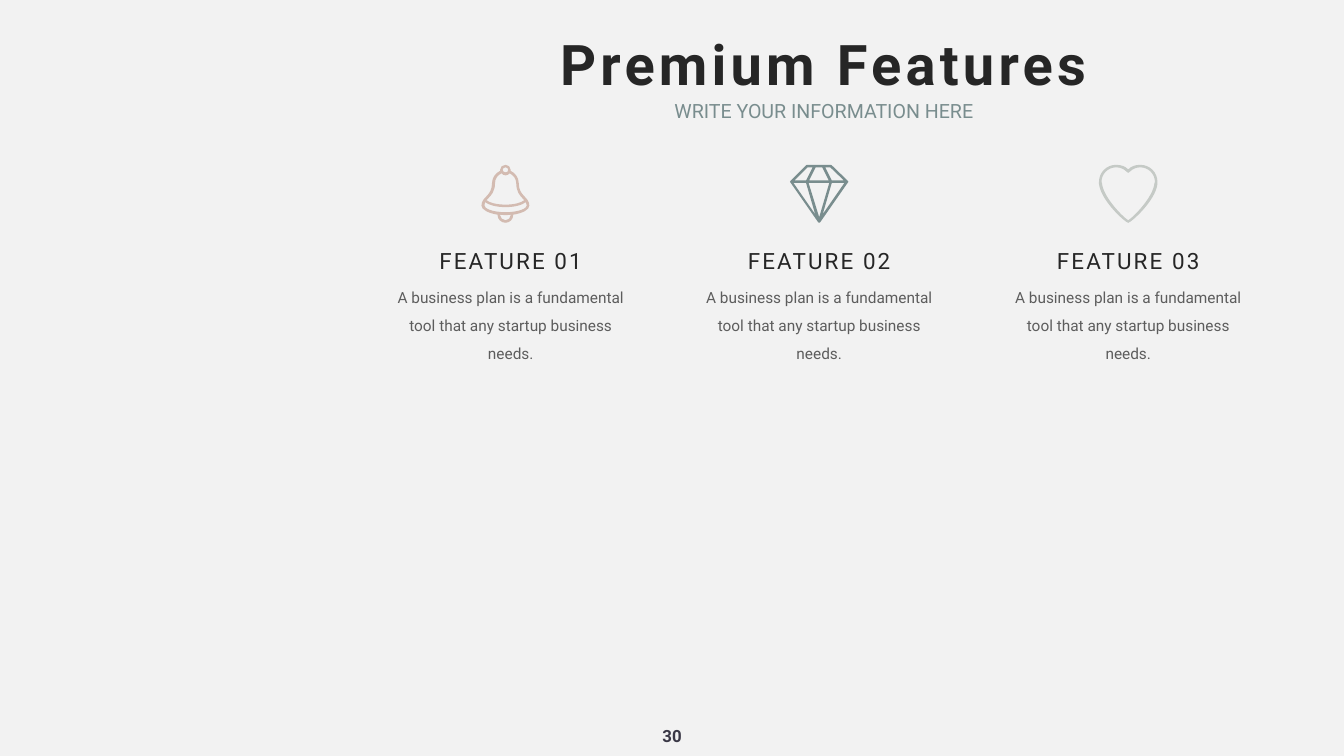
from lxml import etree
from pptx import Presentation
from pptx.dml.color import RGBColor
from pptx.enum.text import MSO_ANCHOR, MSO_AUTO_SIZE, PP_ALIGN
from pptx.oxml.ns import qn
from pptx.util import Pt

PX = 9144  # EMU per px, 100 px to the inch
CENTER = PP_ALIGN.CENTER
TOP, MIDDLE, BOTTOM = MSO_ANCHOR.TOP, MSO_ANCHOR.MIDDLE, MSO_ANCHOR.BOTTOM
GROW = MSO_AUTO_SIZE.SHAPE_TO_FIT_TEXT

THEME = {
    "font": "Roboto",
    "background": "F2F2F2",
    "title": {"size": 80, "color": "262626", "bold": True, "tracking": 6},
    "subtitle": {"size": 28, "color": "798D8E"},
    "heading": {"size": 32, "color": "262626", "tracking": 3},
    "body": {"size": 22, "color": "5D5D5D"},
    "page": {"size": 24, "color": "3A3846", "bold": True},
    "bell": "D3BBB1",
    "diamond": "798D8E",
    "heart": "C5CAC6",
}

# Each contour lists its start, then lines (x, y) and Bezier curves
# (control 1, control 2, end), in px from the icon's top left corner.
BELL = [
    [(48, 94), (20, 94, 6, 86, 6, 81), (6, 78, 6, 76, 7, 74), (15, 80, 30, 84, 48, 84),
     (65, 84, 81, 80, 88, 74), (89, 76, 90, 78, 90, 81), (90, 86, 75, 94, 48, 94)],
    [(48, 110), (42, 110, 37, 105, 37, 100), (37, 99), (41, 99, 44, 100, 48, 100),
     (51, 100, 55, 99, 58, 99), (58, 100), (58, 105, 53, 110, 48, 110)],
    [(13, 67), (19, 61, 27, 53, 27, 36), (27, 28, 32, 20, 40, 17), (42, 19, 44, 21, 48, 21),
     (51, 21, 54, 19, 56, 17), (63, 20, 69, 28, 69, 36), (69, 53, 76, 61, 82, 67),
     (85, 70), (80, 75, 65, 79, 48, 79), (30, 79, 15, 75, 10, 70)],
    [(48, 5), (51, 5, 53, 7, 53, 10), (53, 13, 51, 15, 48, 15),
     (45, 15, 42, 13, 42, 10), (42, 7, 45, 5, 48, 5)],
    [(95, 81), (95, 63, 74, 63, 74, 36), (74, 26, 67, 16, 58, 12), (58, 10),
     (58, 4, 53, 0, 48, 0), (42, 0, 37, 4, 37, 10), (37, 12), (28, 16, 21, 26, 21, 36),
     (21, 63, 0, 63, 0, 81), (0, 89, 14, 96, 32, 99), (32, 100),
     (32, 108, 39, 115, 48, 115), (56, 115, 63, 108, 63, 100), (63, 99),
     (82, 96, 95, 89, 95, 81)],
]
DIAMOND = [
    [(65, 98), (83, 36), (108, 36)],
    [(58, 104), (37, 36), (78, 36)],
    [(7, 36), (32, 36), (50, 98)],
    [(35, 5), (45, 5), (32, 31), (9, 31)],
    [(64, 5), (77, 31), (38, 31), (51, 5)],
    [(80, 5), (107, 31), (83, 31), (70, 5)],
    [(116, 34), (115, 32), (83, 1), (81, 0), (34, 0), (32, 1), (1, 32), (0, 34),
     (1, 35), (56, 114), (58, 115), (60, 114), (115, 35)],
]
HEART = [
    [(110, 37), (107, 65, 68, 104, 58, 110), (48, 104, 9, 65, 6, 37), (5, 34),
     (5, 18, 18, 5, 34, 5), (42, 5, 49, 8, 54, 13), (58, 16), (62, 13),
     (67, 8, 74, 5, 82, 5), (98, 5, 111, 18, 111, 34)],
    [(116, 34), (116, 15, 101, 0, 82, 0), (72, 0, 64, 3, 58, 9), (52, 3, 44, 0, 34, 0),
     (15, 0, 0, 15, 0, 34), (0, 38), (4, 72, 53, 115, 58, 115),
     (63, 115, 112, 72, 116, 38)],
]


def write_text(shape, text, style, anchor, wrap=False, **paragraph_format):
    frame = shape.text_frame
    frame.text = text
    paragraph = frame.paragraphs[0]
    run = paragraph.runs[0]
    look = THEME[style]
    formats = (
        (frame, {"word_wrap": wrap, "auto_size": GROW, "vertical_anchor": anchor}),
        (paragraph, {"alignment": CENTER, **paragraph_format}),
        (run.font, {"name": THEME["font"], "size": Pt(look["size"]),
                    "bold": look.get("bold", False)}),
    )
    for target, values in formats:
        for name, value in values.items():
            setattr(target, name, value)
    run.font.color.rgb = RGBColor.from_string(look["color"])
    if "tracking" in look:
        run.font._element.set("spc", str(look["tracking"] * 100))


def add_icon(shapes, left, top, contours, color):
    """Draw the contours as one freeform, then bend its lines into curves."""
    builder = shapes.build_freeform(*contours[0][0], scale=PX)
    for number, contour in enumerate(contours):
        if number:
            builder.move_to(*contour[0])
        builder.add_line_segments([segment[-2:] for segment in contour[1:]], close=True)
    icon = builder.convert_to_shape(left * PX, top * PX)

    segments = [segment for contour in contours for segment in contour[1:]]
    lines = list(icon._element.iter(qn("a:lnTo")))
    for line, segment in zip(lines, segments):
        if len(segment) == 6:
            line.tag = qn("a:cubicBezTo")
            for position, (x, y) in enumerate((segment[:2], segment[2:4])):
                line.insert(position, etree.Element(qn("a:pt"), x=str(x), y=str(y)))

    icon.shadow.inherit = False
    icon.fill.solid()
    icon.fill.fore_color.rgb = RGBColor.from_string(color)
    icon.line.fill.background()


presentation = Presentation()
presentation.slide_width, presentation.slide_height = 2666 * PX, 1500 * PX
slide = presentation.slides.add_slide(presentation.slide_layouts[5])
slide.background.fill.solid()
slide.background.fill.fore_color.rgb = RGBColor.from_string(THEME["background"])
shapes = slide.shapes

title = shapes.title
title.left, title.top, title.width, title.height = (
    1091 * PX, 52 * PX, 1085 * PX, 145 * PX)
write_text(title, "Premium Features", "title", BOTTOM)

subtitle = shapes.add_textbox(1323 * PX, 183 * PX, 622 * PX, 62 * PX)
write_text(subtitle, "WRITE YOUR INFORMATION HERE", "subtitle", TOP,
           line_spacing=Pt(40), space_after=Pt(12))

page_number = shapes.add_textbox(1302 * PX, 1435 * PX, 62 * PX, 50 * PX)
write_text(page_number, "30", "page", MIDDLE)

features = (("bell", BELL), ("diamond", DIAMOND), ("heart", HEART))
for index, (icon_name, contours) in enumerate(features):
    left = 754 + index * 1225 // 2

    body = shapes.add_textbox(left * PX, 548 * PX, 518 * PX, 116 * PX)
    write_text(body, "A business plan is a fundamental tool that any startup business needs.",
               "body", TOP, wrap=True, line_spacing=Pt(40), space_after=Pt(18))

    heading = shapes.add_textbox((left + 103) * PX, 484 * PX, 312 * PX, 64 * PX)
    write_text(heading, f"FEATURE {index + 1:02}", "heading", BOTTOM)

    add_icon(shapes, left + 201, 327, contours, THEME[icon_name])

presentation.save("out.pptx")
